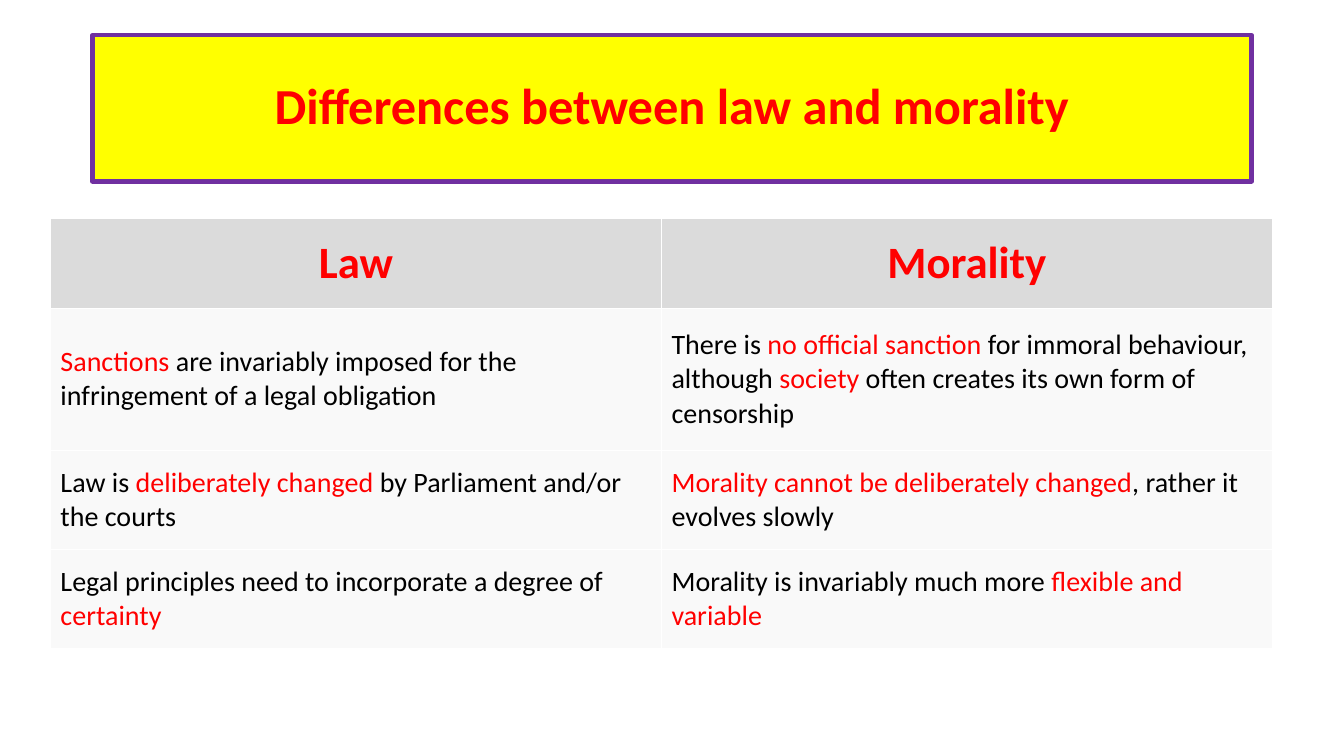
from pptx import Presentation
from pptx.dml.color import RGBColor
from pptx.enum.shapes import MSO_SHAPE
from pptx.enum.text import MSO_ANCHOR, PP_ALIGN
from pptx.oxml import parse_xml
from pptx.oxml.ns import nsdecls
from pptx.util import Inches, Pt

RECTANGLE = MSO_SHAPE.RECTANGLE
MIDDLE = MSO_ANCHOR.MIDDLE
LEFT, CENTER = PP_ALIGN.LEFT, PP_ALIGN.CENTER

# Colours
RED, BLACK, WHITE = "FF0000", "000000", "FFFFFF"
YELLOW, PURPLE = "FFFF00", "7030A0"
HEADER_GREY, BODY_GREY = "DBDBDB", "F9F9F9"

# Text formats
TITLE = {"size": Pt(36), "bold": True}
HEADER = {"size": Pt(32), "bold": True}
BODY = {"size": Pt(20), "bold": False}

# Asterisks enclose the words set in red
COMPARISON = [
    ("*Law*", "*Morality*"),
    ("*Sanctions* are invariably imposed for the infringement of a legal obligation",
     "There is *no official sanction *for immoral behaviour, although *society* "
     "often creates its own form of censorship"),
    ("Law is *deliberately changed *by Parliament and/or the courts",
     "*Morality cannot be deliberately changed*, rather it evolves slowly"),
    ("Legal principles need to incorporate a degree of *certainty*",
     "Morality is invariably much more *flexible and variable*"),
]
ROW_HEIGHTS = [10.7, 16.9, 11.8, 11.8]


def color(hex_code):
    return RGBColor.from_string(hex_code)


class SlideBuilder:
    """Places styled elements on a grid of 160 columns by 90 rows."""

    font_name = "Calibri"
    columns, rows = 160, 90

    def __init__(self, deck):
        self.page = deck.slides.add_slide(deck.slide_layouts[6])
        self.column = deck.slide_width / self.columns
        self.row = deck.slide_height / self.rows

    def place(self, left, top, width, height):
        units = (self.column, self.row, self.column, self.row)
        return [round(n * unit) for n, unit in zip((left, top, width, height), units)]

    def add_text(self, frame, text, text_format, align):
        para = frame.paragraphs[0]
        para.alignment = align
        for index, part in enumerate(text.split("*")):
            if not part:
                continue
            span = para.add_run()
            span.text = part
            for name, value in {"name": self.font_name, **text_format}.items():
                setattr(span.font, name, value)
            span.font.color.rgb = color(RED if index % 2 else BLACK)
        return para

    def banner(self, text, area):
        box = self.page.shapes.add_shape(RECTANGLE, *self.place(*area))
        box.shadow.inherit = False
        box.fill.solid()
        box.fill.fore_color.rgb = color(YELLOW)
        box.line.color.rgb = color(PURPLE)
        box.line.width = Pt(3)
        box.text_frame.word_wrap = True
        box.text_frame.vertical_anchor = MIDDLE
        self.add_text(box.text_frame, text, TITLE, CENTER).line_spacing = 0.9

    def table(self, content, left, top, width, heights):
        area = self.place(left, top, width, sum(heights))
        grid = self.page.shapes.add_table(len(content), len(content[0]), *area).table
        grid.horz_banding = False
        for line, height in zip(grid.rows, heights):
            line.height = round(height * self.row)
        for row_index, texts in enumerate(content):
            for column_index, text in enumerate(texts):
                self.cell(grid.cell(row_index, column_index), text, row_index == 0)

    def cell(self, cell, text, is_header):
        # Borders come before the fill in the cell properties
        properties = cell._tc.get_or_add_tcPr()
        for side in ("lnL", "lnR", "lnT", "lnB"):
            properties.append(parse_xml(
                f'<a:{side} {nsdecls("a")} w="{Pt(1)}"><a:solidFill>'
                f'<a:srgbClr val="{WHITE}"/></a:solidFill></a:{side}>'))
        cell.fill.solid()
        cell.fill.fore_color.rgb = color(HEADER_GREY if is_header else BODY_GREY)
        cell.vertical_anchor = MIDDLE
        self.add_text(cell.text_frame, text, HEADER if is_header else BODY,
                      CENTER if is_header else LEFT)


def main():
    deck = Presentation()
    deck.slide_width, deck.slide_height = Inches(13.33), Inches(7.5)
    builder = SlideBuilder(deck)
    # Title
    builder.banner("*Differences between law and morality*", (11, 4.2, 138, 17.4))
    # Comparison table
    builder.table(COMPARISON, 6, 26, 145.5, ROW_HEIGHTS)
    deck.save("out.pptx")


if __name__ == "__main__":
    main()
